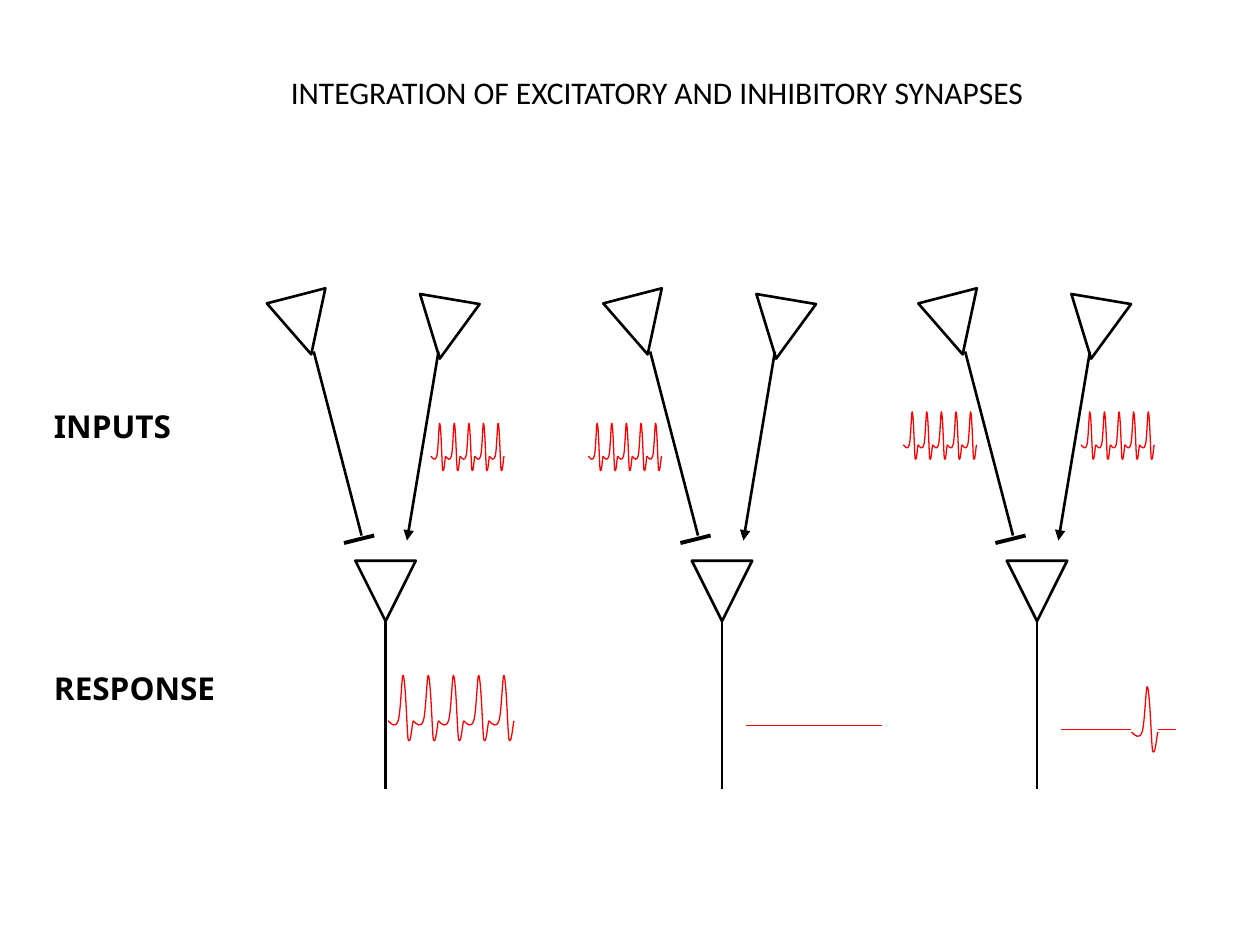
import pptx
import pptx.util
import pptx.dml.color
import pptx.enum.shapes
import pptx.enum.text
import pptx.oxml.ns
from lxml import etree

PX = 9144  # 100 px to the inch
COLORS = {"ink": "000000", "paper": "FFFFFF", "signal": "FF0000"}

# text, left, top, width, height, font, bold
LABELS = [
    ("INTEGRATION OF EXCITATORY AND INHIBITORY SYNAPSES", 221, 53, 607, 40, "Calibri", False),
    ("INPUTS", 33, 318, 113, 40, "Noto Sans", True),
    ("RESPONSE", 33, 526, 151, 40, "Noto Sans", True),
]

# Each circuit is placed by the left edge of its lower cell body.
CIRCUIT_LEFTS = [282, 549, 799]
CELL_SIZE = 48
CELLS = [(0, 445, 180), (47, 237, 189.6), (-65, 234, 165.5)]  # dx, top, rotation
# dx1, y1, dx2, y2, line width, arrow
FIBRES = [
    (66, 279, 41, 429, 1.5, True),
    (24, 493, 24, 626, 1.5, False),
    (-33, 279, 5, 425, 1.5, False),
    (15, 425, -9, 431, 2.25, False),
]

# left, baseline, width of the train, spike height, spikes
SPIKE_TRAINS = [
    (342, 362, 58, 42, 5),
    (467, 362, 58, 42, 5),
    (717, 353, 58, 42, 5),
    (858, 353, 58, 42, 5),
    (308, 572, 100, 58, 5),
    (898, 581, 21, 58, 1),
]
FLAT_SIGNALS = [(592, 700, 576, 0.75), (842, 898, 579, 0.5), (919, 933, 579, 0.5)]

# One spike in a frame 20 wide and 58 high: a start, then three points per Bezier curve
SPIKE_FRAME = (20, 58)
SPIKE_POINTS = [
    (0, 0),
    (3, 3), (6, 6), (8, 0),
    (10, -5), (11, -38), (12, -36),
    (14, -33), (15, 9), (16, 15),
    (18, 20), (19, 3), (20, 0),
]


def color(name):
    return pptx.dml.color.RGBColor.from_string(COLORS[name])


def emu(length):
    return pptx.util.Emu(round(length * PX))


def set_line(shape, name, width):
    shape.line.color.rgb = color(name)
    shape.line.width = pptx.util.Pt(width)


def add_label(slide, text, left, top, width, height, font, bold):
    box = slide.shapes.add_textbox(emu(left), emu(top), emu(width), emu(height))
    frame = box.text_frame
    frame.word_wrap = False
    frame.auto_size = pptx.enum.text.MSO_AUTO_SIZE.SHAPE_TO_FIT_TEXT
    paragraph = frame.paragraphs[0]
    paragraph.text = text
    paragraph.font.name = font
    paragraph.font.size = pptx.util.Pt(18)
    paragraph.font.bold = bold
    paragraph.font.color.rgb = color("ink")


def add_line(slide, x1, y1, x2, y2, name, width, arrow=False):
    line = slide.shapes.add_connector(
        pptx.enum.shapes.MSO_CONNECTOR.STRAIGHT, emu(x1), emu(y1), emu(x2), emu(y2))
    set_line(line, name, width)
    if arrow:
        etree.SubElement(line.line._get_or_add_ln(), pptx.oxml.ns.qn("a:tailEnd"), type="triangle")
    etree.SubElement(line._element.spPr, pptx.oxml.ns.qn("a:effectLst"))


def add_cell(slide, left, top, rotation):
    cell = slide.shapes.add_shape(
        pptx.enum.shapes.MSO_SHAPE.ISOSCELES_TRIANGLE,
        emu(left), emu(top), emu(CELL_SIZE), emu(CELL_SIZE))
    cell.rotation = rotation
    cell.shadow.inherit = False
    cell.fill.solid()
    cell.fill.fore_color.rgb = color("paper")
    set_line(cell, "ink", 1.5)


def curve_segments(shape):
    """Turn every three straight segments of a freeform into one Bezier curve."""
    segments = list(shape._element.iter(pptx.oxml.ns.qn("a:lnTo")))
    for first in range(0, len(segments), 3):
        curve = etree.Element(pptx.oxml.ns.qn("a:cubicBezTo"))
        segments[first].addprevious(curve)
        for segment in segments[first:first + 3]:
            curve.append(segment[0])
            segment.getparent().remove(segment)


def add_spike_train(slide, left, baseline, width, height, count):
    pitch = width / count
    x_scale, y_scale = pitch / SPIKE_FRAME[0], height / SPIKE_FRAME[1]
    for index in range(count):
        points = [(emu(left + index * pitch + x * x_scale), emu(baseline + y * y_scale))
                  for x, y in SPIKE_POINTS]
        builder = slide.shapes.build_freeform(*points[0])
        builder.add_line_segments(points[1:], close=False)
        spike = builder.convert_to_shape()
        curve_segments(spike)
        spike.shadow.inherit = False
        spike.fill.background()
        set_line(spike, "signal", 0.75)


def main():
    presentation = pptx.Presentation()
    presentation.slide_width, presentation.slide_height = emu(1000), emu(750)
    slide = presentation.slides.add_slide(presentation.slide_layouts[6])
    for left in CIRCUIT_LEFTS:
        for dx, top, rotation in CELLS:
            add_cell(slide, left + dx, top, rotation)
        for dx1, y1, dx2, y2, width, arrow in FIBRES:
            add_line(slide, left + dx1, y1, left + dx2, y2, "ink", width, arrow)
    for train in SPIKE_TRAINS:
        add_spike_train(slide, *train)
    for x1, x2, y, width in FLAT_SIGNALS:
        add_line(slide, x1, y, x2, y, "signal", width)
    for label in LABELS:
        add_label(slide, *label)
    presentation.save("out.pptx")


if __name__ == "__main__":
    main()
